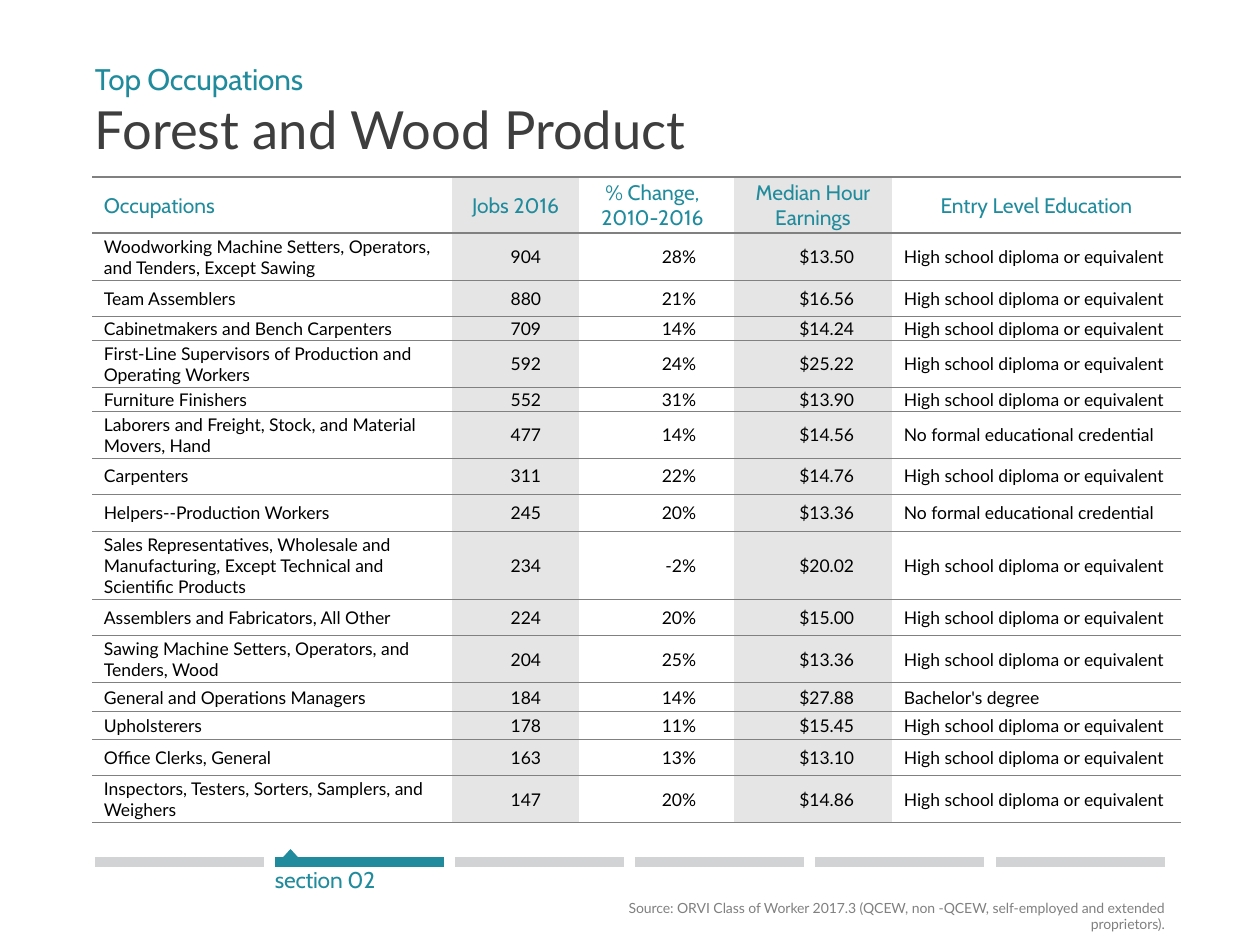
from lxml import etree
from pptx import Presentation
from pptx.dml.color import RGBColor
from pptx.enum.shapes import MSO_CONNECTOR, MSO_SHAPE
from pptx.enum.text import MSO_ANCHOR, PP_ALIGN
from pptx.oxml.ns import qn
from pptx.util import Pt

LEFT, CENTER, RIGHT = PP_ALIGN.LEFT, PP_ALIGN.CENTER, PP_ALIGN.RIGHT
MIDDLE, TOP = MSO_ANCHOR.MIDDLE, MSO_ANCHOR.TOP
STRAIGHT, TRIANGLE = MSO_CONNECTOR.STRAIGHT, MSO_SHAPE.ISOSCELES_TRIANGLE
PLAIN_TABLE = "{2D5ABB26-0587-4C30-8999-92F81FD0307C}"
TEAL, DARK, BLACK, GREY = "208B9C", "3E3E3E", "000000", "808080"
SHADE, BAR = "E5E5E5", "D1D3D4"

KICKER = "Top Occupations"
TITLE = "Forest and Wood Product"
SECTION = "section 02"
SOURCE = ("Source: ORVI Class of Worker 2017.3 (QCEW, non -QCEW, "
          "self-employed and extended proprietors).")
HEADERS = ["Occupations", "Jobs 2016", "% Change,\n2010-2016",
           "Median Hour Earnings", "Entry Level Education"]
DIPLOMA = "High school diploma or equivalent"
NO_CREDENTIAL = "No formal educational credential"
OCCUPATIONS = [
    ("Woodworking Machine Setters, Operators, and Tenders, Except Sawing",
     "904", "28%", "$13.50", DIPLOMA),
    ("Team Assemblers", "880", "21%", "$16.56", DIPLOMA),
    ("Cabinetmakers and Bench Carpenters", "709", "14%", "$14.24", DIPLOMA),
    ("First-Line Supervisors of Production and Operating Workers",
     "592", "24%", "$25.22", DIPLOMA),
    ("Furniture Finishers", "552", "31%", "$13.90", DIPLOMA),
    ("Laborers and Freight, Stock, and Material Movers, Hand",
     "477", "14%", "$14.56", NO_CREDENTIAL),
    ("Carpenters", "311", "22%", "$14.76", DIPLOMA),
    ("Helpers--Production Workers", "245", "20%", "$13.36", NO_CREDENTIAL),
    ("Sales Representatives, Wholesale and Manufacturing, Except Technical "
     "and Scientific Products", "234", "-2%", "$20.02", DIPLOMA),
    ("Assemblers and Fabricators, All Other", "224", "20%", "$15.00", DIPLOMA),
    ("Sawing Machine Setters, Operators, and Tenders, Wood",
     "204", "25%", "$13.36", DIPLOMA),
    ("General and Operations Managers",
     "184", "14%", "$27.88", "Bachelor's degree"),
    ("Upholsterers", "178", "11%", "$15.45", DIPLOMA),
    ("Office Clerks, General", "163", "13%", "$13.10", DIPLOMA),
    ("Inspectors, Testers, Sorters, Samplers, and Weighers",
     "147", "20%", "$14.86", DIPLOMA),
]
COLUMN_WIDTHS = [360, 127, 155, 158, 289]
ROW_HEIGHTS = [56, 47, 36, 24, 47, 24, 47, 36, 37, 69, 36, 47, 29, 28, 36, 47]
SHADED_COLUMNS = (1, 3)
SECTION_COUNT, CURRENT_SECTION = 6, 1


def px(length):
    return round(length * 914400 / 126)


def color(value):
    return RGBColor.from_string(value)


def write(frame, text, size=10, font="Lato", ink=BLACK, align=LEFT, spacing=0,
          line=None, more=False):
    for index, content in enumerate(text.split("\n")):
        new = more or index
        paragraph = frame.add_paragraph() if new else frame.paragraphs[0]
        paragraph.alignment = align
        if line:
            paragraph.line_spacing = Pt(line)
        run = paragraph.add_run()
        run.text = content
        run.font.size = Pt(size)
        run.font.name = font
        run.font.color.rgb = color(ink)
        if spacing:
            run.font._element.set("spc", str(round(spacing * 100)))


def set_margins(part, left, top, right, bottom):
    part.margin_left, part.margin_top = px(left), px(top)
    part.margin_right, part.margin_bottom = px(right), px(bottom)


def add_text_frame(left, top, width, height, margins=(0, 0, 0, 0)):
    frame = slide.shapes.add_textbox(
        px(left), px(top), px(width), px(height)).text_frame
    frame.word_wrap = True
    frame.vertical_anchor = TOP
    set_margins(frame, *margins)
    return frame


def set_borders(cell, top, bottom):
    properties = cell._tc.get_or_add_tcPr()
    for index, (side, width) in enumerate((("lnT", top), ("lnB", bottom))):
        edge = etree.Element(qn("a:" + side), w=str(Pt(width)))
        fill = etree.SubElement(edge, qn("a:solidFill"))
        etree.SubElement(fill, qn("a:srgbClr"), val=GREY)
        properties.insert(index, edge)


def add_occupation_table():
    rows = [HEADERS, *OCCUPATIONS]
    table = slide.shapes.add_table(
        len(rows), len(HEADERS), px(92), px(177),
        px(sum(COLUMN_WIDTHS)), px(sum(ROW_HEIGHTS))).table
    table.first_row = table.horz_banding = False
    table._tbl.tblPr.find(qn("a:tableStyleId")).text = PLAIN_TABLE
    for column, width in zip(table.columns, COLUMN_WIDTHS):
        column.width = px(width)
    edges = [1, 1] + [0.25] * (len(rows) - 2) + [1]
    for r, values in enumerate(rows):
        table.rows[r].height = px(ROW_HEIGHTS[r])
        for c, value in enumerate(values):
            cell = table.cell(r, c)
            cell.vertical_anchor = MIDDLE
            if c in SHADED_COLUMNS:
                cell.fill.solid()
                cell.fill.fore_color.rgb = color(SHADE)
            else:
                cell.fill.background()
            set_borders(cell, edges[r], edges[r + 1])
            if r == 0:
                set_margins(cell, 0 if c else 12, 1, 0, 0)
                write(cell.text_frame, value, size=12, font="Cabin", ink=TEAL,
                      align=CENTER if c else LEFT)
            elif c in (0, len(HEADERS) - 1):
                set_margins(cell, 12, 1, 1, 0)
                write(cell.text_frame, value)
            else:
                set_margins(cell, 1, 1, 38, 0)
                write(cell.text_frame, value, align=RIGHT)
    change, earnings = (table.cell(0, c).text_frame.paragraphs[0]
                        for c in (2, 3))
    change._p.get_or_add_pPr().set("marR", str(px(8)))
    earnings._p.get_or_add_pPr().set("indent", str(px(-10)))


def add_section_bars():
    for index in range(SECTION_COUNT):
        left = 95 + 901 * index // (SECTION_COUNT - 1)
        current = index == CURRENT_SECTION
        bar = slide.shapes.add_connector(
            STRAIGHT, px(left), px(862), px(left + 169), px(862))
        bar.line.color.rgb = color(TEAL if current else BAR)
        bar.line.width = Pt(5.28)
        etree.SubElement(bar._element.spPr, qn("a:effectLst"))
        if current:
            marker = slide.shapes.add_shape(
                TRIANGLE, px(left), px(849), px(31), px(17))
            marker.shadow.inherit = False
            marker.fill.solid()
            marker.fill.fore_color.rgb = color(TEAL)
            marker.line.fill.background()
            write(add_text_frame(left, 866, 405, 26), SECTION, size=13,
                  font="Cabin", ink=TEAL, spacing=-0.1, line=15.5)


presentation = Presentation()
presentation.slide_width, presentation.slide_height = px(1260), px(945)
slide = presentation.slides.add_slide(presentation.slide_layouts[6])

add_occupation_table()
add_section_bars()
heading = add_text_frame(95, 55, 1026, 106, margins=(0, 6, 0, 0))
write(heading, KICKER, size=17, font="Cabin", ink=TEAL, spacing=-0.1)
write(heading, TITLE, size=30, ink=DARK, more=True)
write(add_text_frame(567, 893, 611, 30, margins=(13, 6, 13, 6)), SOURCE,
      size=8, ink=GREY, align=RIGHT, spacing=-0.05)

presentation.save("out.pptx")
